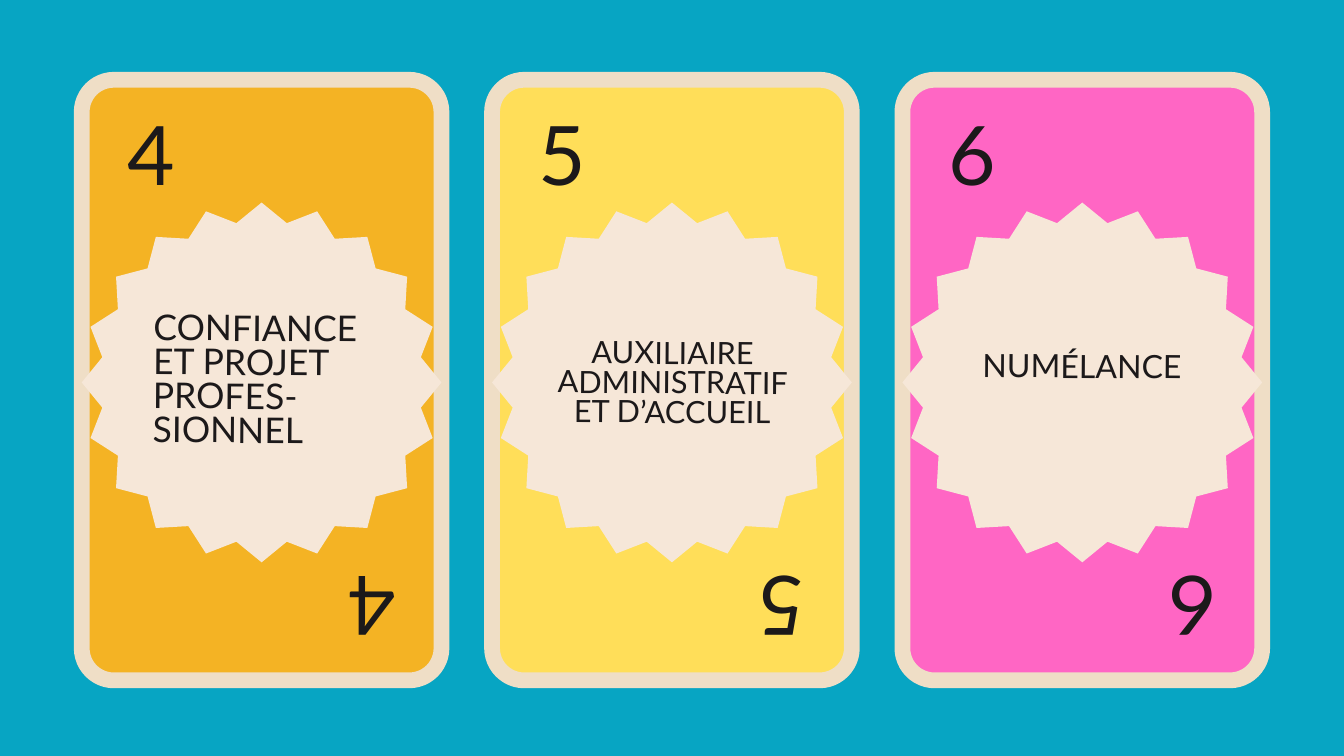
from dataclasses import dataclass
from math import cos, pi, sin

from pptx import Presentation
from pptx import util as u
from pptx.dml import color
from pptx.enum import shapes, text

HUES = {
    "sea": "07A5C3",
    "edge": "EFDEC6",
    "star": "F6E7D8",
    "ink": "1C191A",
    "gold": "F4B324",
    "sun": "FFDE59",
    "pink": "FF66C4",
}
WIDE, HIGH = 960, 540
CARD_W, CARD_H, CARD_TOP = 257, 429, 57
STEP = 293.1
ROUND = 23
STAR_Y, TIPS = 273.2, 20
OUTER, INNER = 128.5, 115.2
NUM_W, NUM_H, NUM_IN = 80, 57, 10
NUM_TOP, NUM_LOW = 88, 399.6
TILT = 0.4
LEFT, MID = text.PP_ALIGN.LEFT, text.PP_ALIGN.CENTER


@dataclass
class Box:
    x: float
    y: float
    w: float
    h: float
    turn: float = 0


@dataclass
class Style:
    size: float
    lead: float
    align: text.PP_ALIGN = MID


@dataclass
class Card:
    num: str
    hue: str
    lines: list[str]
    box: Box
    style: Style


CARDS = [
    Card("4", "gold", ["CONFIANCE", "ET PROJET PROFES-SIONNEL"],
         Box(109.4, 224.6, 162.7, 97.2, TILT), Style(25.3, 24.3, LEFT)),
    Card("5", "sun", ["AUXILIAIRE ADMINISTRATIF ET D’ACCUEIL"],
         Box(391, 243.4, 178.6, 63.4, TILT), Style(21.9, 21.1)),
    Card("6", "pink", ["NUMÉLANCE"],
         Box(687.6, 252.7, 170.6, 22.3, TILT), Style(22.9, 22)),
]
DIGIT = Style(58.6, 56.3)


def tint(name: str) -> color.RGBColor:
    return color.RGBColor.from_string(HUES[name])


def paint(shape, hue: str) -> None:
    shape.shadow.inherit = False
    shape.fill.solid()
    shape.fill.fore_color.rgb = tint(hue)


def add_frame(slide, x: float, hue: str) -> None:
    frame = slide.shapes.add_shape(
        shapes.MSO_SHAPE.ROUNDED_RECTANGLE,
        u.Pt(x), u.Pt(CARD_TOP), u.Pt(CARD_W), u.Pt(CARD_H))
    frame.adjustments[0] = ROUND / CARD_W
    paint(frame, hue)
    frame.line.color.rgb = tint("edge")
    frame.line.width = u.Pt(11.25)


def add_star(slide, mid: float) -> None:
    spots = []
    for i in range(2 * TIPS):
        reach = INNER if i % 2 else OUTER
        turn = i * pi / TIPS
        spots.append((100 * (mid + reach * sin(turn)),
                      100 * (STAR_Y - reach * cos(turn))))
    pen = slide.shapes.build_freeform(*spots[0], scale=u.Pt(1) / 100)
    pen.add_line_segments(spots[1:], close=True)
    star = pen.convert_to_shape()
    paint(star, "star")
    star.line.fill.background()


def add_text(slide, box: Box, lines: list[str], style: Style) -> None:
    shape = slide.shapes.add_textbox(
        u.Pt(box.x), u.Pt(box.y), u.Pt(box.w), u.Pt(box.h))
    shape.rotation = box.turn
    frame = shape.text_frame
    frame.word_wrap = True
    frame.auto_size = text.MSO_AUTO_SIZE.SHAPE_TO_FIT_TEXT
    frame.margin_left = frame.margin_right = 0
    frame.margin_top = frame.margin_bottom = 0
    for i, line in enumerate(lines):
        para = frame.add_paragraph() if i else frame.paragraphs[0]
        para.alignment = style.align
        para.line_spacing = u.Pt(style.lead)
        run = para.add_run()
        run.text = line
        run.font.name = "Lato"
        run.font.size = u.Pt(style.size)
        run.font.color.rgb = tint("ink")


def add_card(slide, card: Card, x: float) -> None:
    add_frame(slide, x, card.hue)
    add_star(slide, x + CARD_W / 2)
    far = x + CARD_W - NUM_IN - NUM_W
    for box in (Box(x + NUM_IN, NUM_TOP, NUM_W, NUM_H),
                Box(far, NUM_LOW, NUM_W, NUM_H, 180)):
        add_text(slide, box, [card.num], DIGIT)
    add_text(slide, card.box, card.lines, card.style)


def main() -> None:
    deck = Presentation()
    deck.slide_width, deck.slide_height = u.Pt(WIDE), u.Pt(HIGH)
    slide = deck.slides.add_slide(deck.slide_layouts[6])
    back = slide.background.fill
    back.solid()
    back.fore_color.rgb = tint("sea")
    first = (WIDE - CARD_W) / 2 - STEP
    for i, card in enumerate(CARDS):
        add_card(slide, card, first + i * STEP)
    deck.save("out.pptx")


if __name__ == "__main__":
    main()
